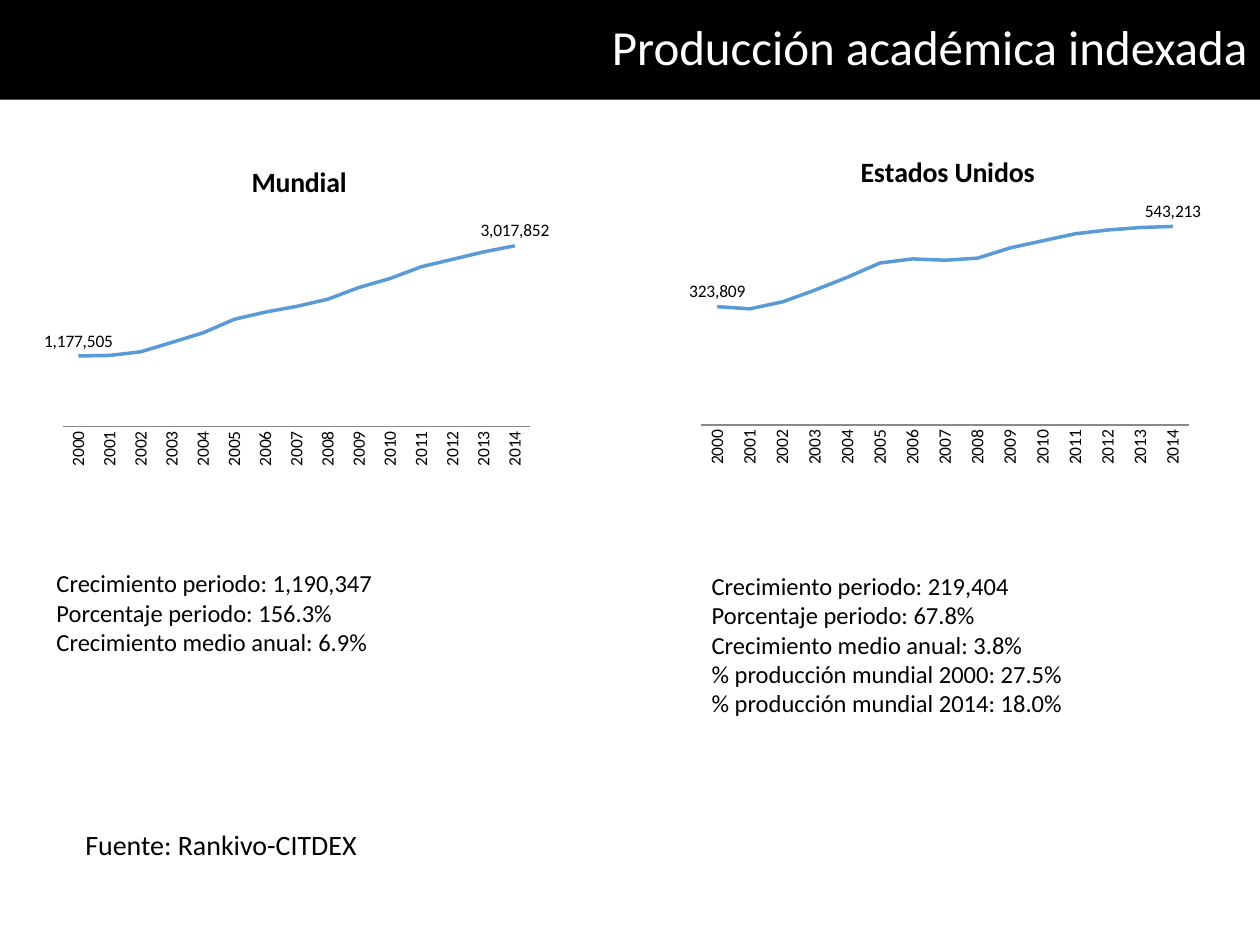
"""Build the slide on indexed academic output, worldwide and in the United States."""
import dataclasses

import pptx
import pptx.chart.data
import pptx.dml.color
import pptx.enum.chart
import pptx.enum.text
import pptx.util

Inches = pptx.util.Inches
Pt = pptx.util.Pt
RGB = pptx.dml.color.RGBColor


@dataclasses.dataclass(frozen=True)
class Theme:
    font: str = "Calibri"
    ink: RGB = RGB(0, 0, 0)
    paper: RGB = RGB(255, 255, 255)
    trend: RGB = RGB(0x5B, 0x9B, 0xD5)
    axis: RGB = RGB(0x89, 0x89, 0x89)
    heading_size: int = 28
    chart_title_size: int = 16
    source_size: int = 16
    body_size: int = 14
    label_size: int = 10


THEME = Theme()
YEARS = [str(year) for year in range(2000, 2015)]
WORLD = [1177505, 1186057, 1246568, 1404246, 1564015, 1789592, 1910321, 2006255,
         2125672, 2322007, 2472102, 2667563, 2791552, 2915515, 3017852]
UNITED_STATES = [323809, 317633, 336857, 369018, 404230, 443188, 454438, 450713,
                 456424, 484468, 503953, 523036, 533453, 540119, 543213]
WORLD_FACTS = [
    "Crecimiento periodo: 1,190,347",
    "Porcentaje periodo: 156.3%",
    "Crecimiento medio anual: 6.9%",
]
UNITED_STATES_FACTS = [
    "Crecimiento periodo: 219,404",
    "Porcentaje periodo: 67.8%",
    "Crecimiento medio anual: 3.8%",
    "% producción mundial 2000: 27.5%",
    "% producción mundial 2014: 18.0%",
]


def apply_format(target, values):
    for name, value in values.items():
        setattr(target, name, value)


def style_font(font, size, color=THEME.ink, bold=False):
    apply_format(font, {"name": THEME.font, "size": Pt(size), "bold": bold})
    font.color.rgb = color


def add_heading(slide, text):
    heading = slide.shapes.title
    apply_format(heading, {"left": 0, "top": 0, "width": Inches(10), "height": Inches(0.79)})
    heading.fill.solid()
    heading.fill.fore_color.rgb = THEME.ink
    heading.text_frame.text = text
    heading.text_frame.vertical_anchor = pptx.enum.text.MSO_ANCHOR.MIDDLE
    paragraph = heading.text_frame.paragraphs[0]
    apply_format(paragraph, {"alignment": pptx.enum.text.PP_ALIGN.RIGHT, "line_spacing": 0.9})
    style_font(paragraph.runs[0].font, THEME.heading_size, THEME.paper)


def place_plot(chart, fractions):
    plot_area = chart.element.xpath("c:chart/c:plotArea")[0]
    for old_layout in plot_area.xpath("c:layout"):
        plot_area.remove(old_layout)
    settings = {"layoutTarget": "inner", "xMode": "edge", "yMode": "edge",
                **dict(zip("xywh", fractions))}
    tags = "".join(f'<c:{tag} val="{value}"/>' for tag, value in settings.items())
    namespace = "http://schemas.openxmlformats.org/drawingml/2006/chart"
    plot_area.insert(0, pptx.oxml.parse_xml(
        f'<c:layout xmlns:c="{namespace}"><c:manualLayout>{tags}</c:manualLayout></c:layout>'))


def style_axes(chart, ceiling):
    none = pptx.enum.chart.XL_TICK_MARK.NONE
    years = chart.category_axis
    apply_format(years, {"major_tick_mark": none, "minor_tick_mark": none,
                         "has_major_gridlines": False})
    style_font(years.tick_labels.font, THEME.label_size)
    years.format.line.color.rgb = THEME.axis
    years.format.line.width = Pt(0.75)
    chart.element.xpath(".//c:catAx/c:txPr/a:bodyPr")[0].set("rot", "-5400000")
    apply_format(chart.value_axis, {"visible": False, "has_major_gridlines": False,
                                    "minimum_scale": 0, "maximum_scale": ceiling})


def style_trend(series):
    series.smooth = False
    series.format.line.color.rgb = THEME.trend
    series.format.line.width = Pt(2)
    series.marker.style = pptx.enum.chart.XL_MARKER_STYLE.NONE
    series.data_labels.show_value = False
    for index in (0, len(YEARS) - 1):
        label = series.points[index].data_label
        style_font(label.font, THEME.label_size)
        label.position = pptx.enum.chart.XL_LABEL_POSITION.ABOVE


def add_trend_chart(slide, region, counts, box, ceiling, plot_fractions):
    data = pptx.chart.data.CategoryChartData(number_format="#,##0")
    data.categories = YEARS
    data.add_series(region, counts)
    chart = slide.shapes.add_chart(
        pptx.enum.chart.XL_CHART_TYPE.LINE, *map(Inches, box), data).chart
    style_font(chart.font, THEME.label_size)
    apply_format(chart, {"has_legend": False, "has_title": True})
    chart.plots[0].vary_by_categories = False
    title = chart.chart_title.text_frame
    title.text = region
    style_font(title.paragraphs[0].runs[0].font, THEME.chart_title_size, bold=True)
    style_axes(chart, ceiling)
    style_trend(chart.plots[0].series[0])
    place_plot(chart, plot_fractions)


def add_text(slide, lines, box, size, wrap=True):
    frame = slide.shapes.add_textbox(*map(Inches, box)).text_frame
    frame.text = "\n".join(lines)
    apply_format(frame, {"word_wrap": wrap,
                         "auto_size": pptx.enum.text.MSO_AUTO_SIZE.SHAPE_TO_FIT_TEXT})
    for paragraph in frame.paragraphs:
        style_font(paragraph.runs[0].font, size)


def main():
    deck = pptx.Presentation()
    apply_format(deck, {"slide_width": Inches(10), "slide_height": Inches(7.5)})
    slide = deck.slides.add_slide(deck.slide_layouts.get_by_name("Title Only"))
    add_heading(slide, "Producción académica indexada")
    add_trend_chart(slide, "Estados Unidos", UNITED_STATES, (5.47, 1.07, 4.09, 2.68),
                    600000, (0.02, 0.21, 0.95, 0.65))
    add_trend_chart(slide, "Mundial", WORLD, (0.35, 1.15, 4.02, 2.6),
                    3500000, (0.03, 0.22, 0.93, 0.64))
    add_text(slide, WORLD_FACTS, (0.35, 4.46, 3.7, 0.81), THEME.body_size)
    add_text(slide, UNITED_STATES_FACTS, (5.55, 4.48, 3.7, 1.28), THEME.body_size)
    add_text(slide, ["Fuente: Rankivo-CITDEX"], (0.58, 6.52, 2.5, 0.37),
             THEME.source_size, wrap=False)
    deck.save("out.pptx")


if __name__ == "__main__":
    main()
